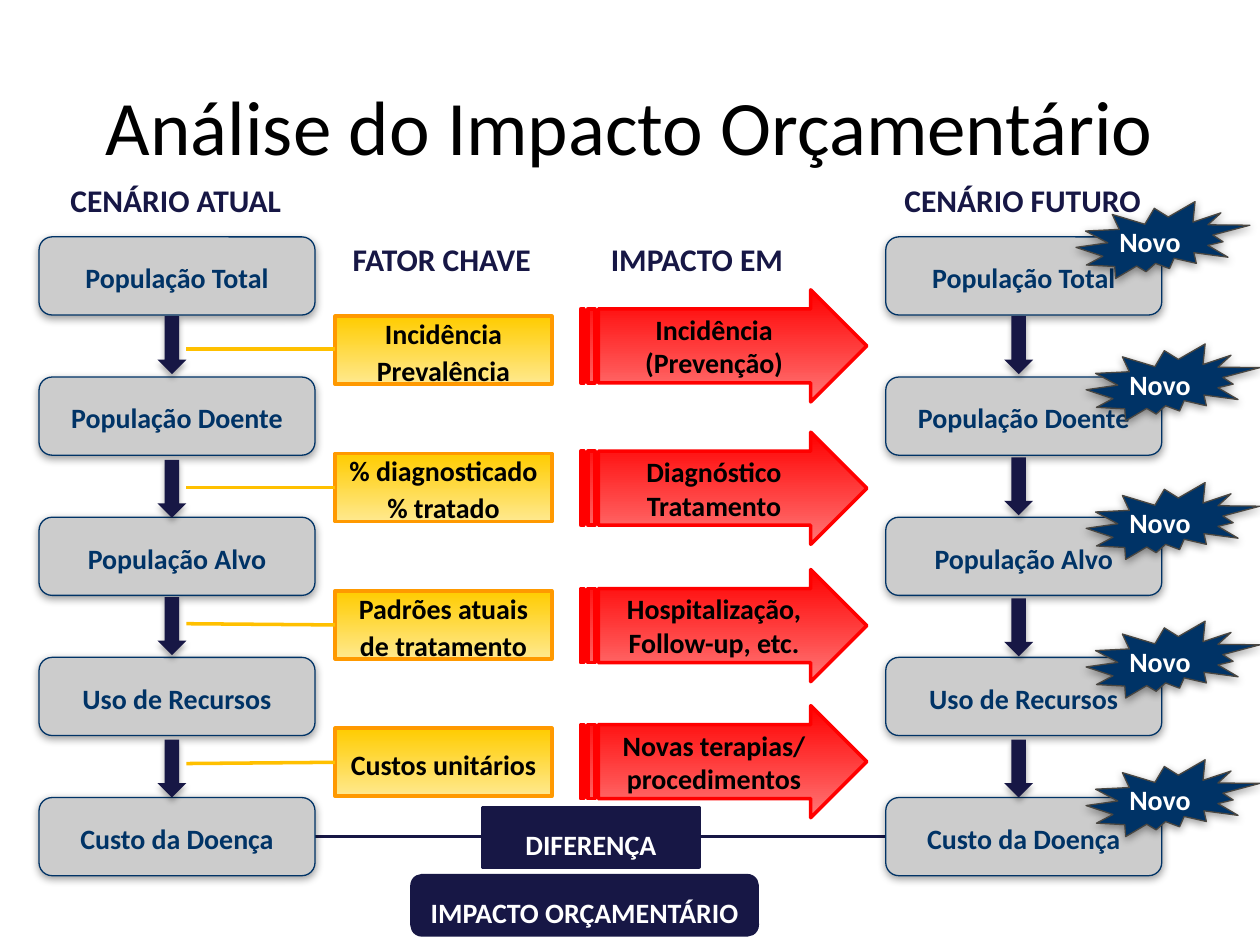
from lxml import etree
from pptx import Presentation
from pptx.dml.color import RGBColor
from pptx.enum import shapes, text
from pptx.oxml import ns
from pptx.util import Inches, Pt

NAVY, BLUE, WHITE, BLACK = "171745", "003366", "FFFFFF", "000000"
KIND = shapes.MSO_SHAPE
STEPS = ["População Total", "População Doente", "População Alvo",
         "Uso de Recursos", "Custo da Doença"]
TOP, PITCH = 1.88, 1.1125
BOX = (2.19, 0.62)
SOFT, FIRM = (38, 5, 1.6), (32, 3.5, 2.2)  # shadow opacity, blur, distance

# Key factor, its impact, tops of both, heights of the link's two ends
PAIRS = [
    ("Incidência\nPrevalência", "Incidência (Prevenção)", 2.51, 2.3, 2.77, 2.77),
    ("% diagnosticado\n% tratado", "Diagnóstico\nTratamento", 3.6, 3.43, 3.87, 3.87),
    ("Padrões atuais\nde tratamento", "Hospitalização, Follow-up, etc.",
     4.69, 4.52, 4.95, 4.96),
    ("Custos unitários", "Novas terapias/ procedimentos", 5.78, 5.6, 6.06, 6.05),
]


def rgb(code):
    return RGBColor.from_string(code)


def add_fx(item, shade=None):
    """Give an item a downward shadow, or none at all."""
    fx = etree.SubElement(item._element.spPr, ns.qn("a:effectLst"))
    if shade:
        alpha, blur, dist = shade
        cast = etree.SubElement(fx, ns.qn("a:outerShdw"), blurRad=str(Pt(blur)),
                                dist=str(Pt(dist)), dir="5400000", rotWithShape="0")
        tint = etree.SubElement(cast, ns.qn("a:srgbClr"), val=BLACK)
        etree.SubElement(tint, ns.qn("a:alpha"), val=str(alpha * 1000))


def write(item, words, color, size=16, bold=True, align="CENTER", space=None):
    frame = item.text_frame
    frame.text = words
    for para in frame.paragraphs:
        para.alignment = getattr(text.PP_ALIGN, align)
        if space:
            para.line_spacing = space
        for run in para.runs:
            run.font.name, run.font.size, run.font.bold = "Calibri", Pt(size), bold
            run.font.color.rgb = rgb(color)
    return frame


def set_pads(frame, pad):
    frame.margin_left = frame.margin_right = Inches(pad)
    frame.margin_top = frame.margin_bottom = Inches(pad)


def add_form(slide, kind, at, fill, line=None, width=2, shade=None):
    """Add a preset shape; a pair of fill colours makes a vertical gradient."""
    form = slide.shapes.add_shape(kind, *map(Inches, at))
    if isinstance(fill, tuple):
        form.fill.gradient()
        form.fill.gradient_angle = 270
        for stop, color in zip(form.fill.gradient_stops, fill):
            stop.color.rgb = rgb(color)
    else:
        form.fill.solid()
        form.fill.fore_color.rgb = rgb(fill)
    if line:
        form.line.color.rgb = rgb(line)
        form.line.width = Pt(width)
    else:
        form.line.fill.background()
    if shade:
        add_fx(form, shade)
    else:
        form.shadow.inherit = False
    form.text_frame.vertical_anchor = text.MSO_ANCHOR.MIDDLE
    return form


def add_link(slide, start, end, color):
    link = slide.shapes.add_connector(
        shapes.MSO_CONNECTOR.STRAIGHT, *map(Inches, start + end))
    link.line.color.rgb = rgb(color)
    link.line.width = Pt(2)
    add_fx(link)


def add_flow(slide, left, drops):
    """Add a column of steps joined by down arrows."""
    for row, step in enumerate(STEPS):
        box = add_form(slide, KIND.ROUNDED_RECTANGLE,
                       (left, TOP + row * PITCH, *BOX), "CCCCCC", BLUE, 0.75, SOFT)
        write(box, step, BLUE, space=1.1).word_wrap = False
    for top in drops:
        add_form(slide, KIND.DOWN_ARROW, (left + 0.94, top, 0.23, 0.46), NAVY,
                 shade=FIRM)


def add_pair(slide, factor, impact, top, peak, start, end):
    """Add a key factor, its link to the flow and the impact arrow."""
    box = add_form(slide, KIND.RECTANGLE, (2.66, top, 1.72, 0.54),
                   ("FFCC00", "FFE98F"), "FF9900")
    write(box, factor, BLACK, space=1.1).word_wrap = False
    add_link(slide, (1.48, start), (2.66, end), "FFC000")
    arrow = add_form(slide, KIND.STRIPED_RIGHT_ARROW, (4.61, peak, 2.27, 0.89),
                     ("FF0000", "FF7676"), "FF0000")
    arrow.adjustments[0] = 0.66
    write(arrow, impact, BLACK).word_wrap = True


def add_seal(slide, left, top):
    seal = add_form(slide, KIND.EXPLOSION2, (left, top, 1.38, 0.61), BLUE,
                    "494641", 0.75, SOFT)
    frame = write(seal, "Novo", WHITE, align="LEFT")
    frame.vertical_anchor = text.MSO_ANCHOR.BOTTOM
    frame.word_wrap = True
    set_pads(frame, 0)
    frame.auto_size = text.MSO_AUTO_SIZE.SHAPE_TO_FIT_TEXT


def add_head(slide, words, left, top, width):
    head = slide.shapes.add_textbox(*map(Inches, (left, top, width, 0.4)))
    write(head, words, NAVY, 18, align="LEFT").word_wrap = False


def add_sum(slide, kind, at, words):
    box = add_form(slide, kind, at, NAVY, NAVY)
    write(box, words, WHITE, space=1.4).word_wrap = False


def set_title(slide, words):
    title = slide.shapes.title
    title.left, title.top, title.width, title.height = map(
        Inches, (0, 0.52, 10, 0.94))
    frame = write(title, words, BLACK, 44, False)
    frame.vertical_anchor = text.MSO_ANCHOR.MIDDLE
    frame.word_wrap = True
    set_pads(frame, 0.03)


def main():
    deck = Presentation()
    deck.slide_width, deck.slide_height = Inches(10), Inches(7.5)
    slide = deck.slides.add_slide(deck.slide_layouts[5])
    set_title(slide, "Análise do Impacto Orçamentário")

    # Result row, linked to the last step of both flows
    add_sum(slide, KIND.RECTANGLE, (3.83, 6.41, 1.72, 0.47), "DIFERENÇA")
    add_link(slide, (2.5, 6.64), (3.83, 6.64), NAVY)
    add_link(slide, (5.55, 6.64), (7.19, 6.64), NAVY)
    add_sum(slide, KIND.ROUNDED_RECTANGLE, (3.27, 6.95, 2.74, 0.47),
            "IMPACTO ORÇAMENTÁRIO")

    # Current and future flows with the factors between them
    add_flow(slide, 0.31, (2.51, 3.65, 4.74, 5.87))
    add_flow(slide, 7.03, (2.51, 3.63, 4.75, 5.87))
    for pair in PAIRS:
        add_pair(slide, *pair)

    # Seals on the future steps
    add_seal(slide, 8.54, 1.6)
    for row in range(4):
        add_seal(slide, 8.62, 2.73 + row * 1.1)

    # Column headings
    add_head(slide, "CENÁRIO ATUAL", 0.46, 1.39, 1.99)
    add_head(slide, "CENÁRIO FUTURO", 7.08, 1.39, 2.17)
    add_head(slide, "FATOR CHAVE", 2.7, 1.86, 1.73)
    add_head(slide, "IMPACTO EM", 4.75, 1.86, 1.83)
    deck.save("out.pptx")


if __name__ == "__main__":
    main()
